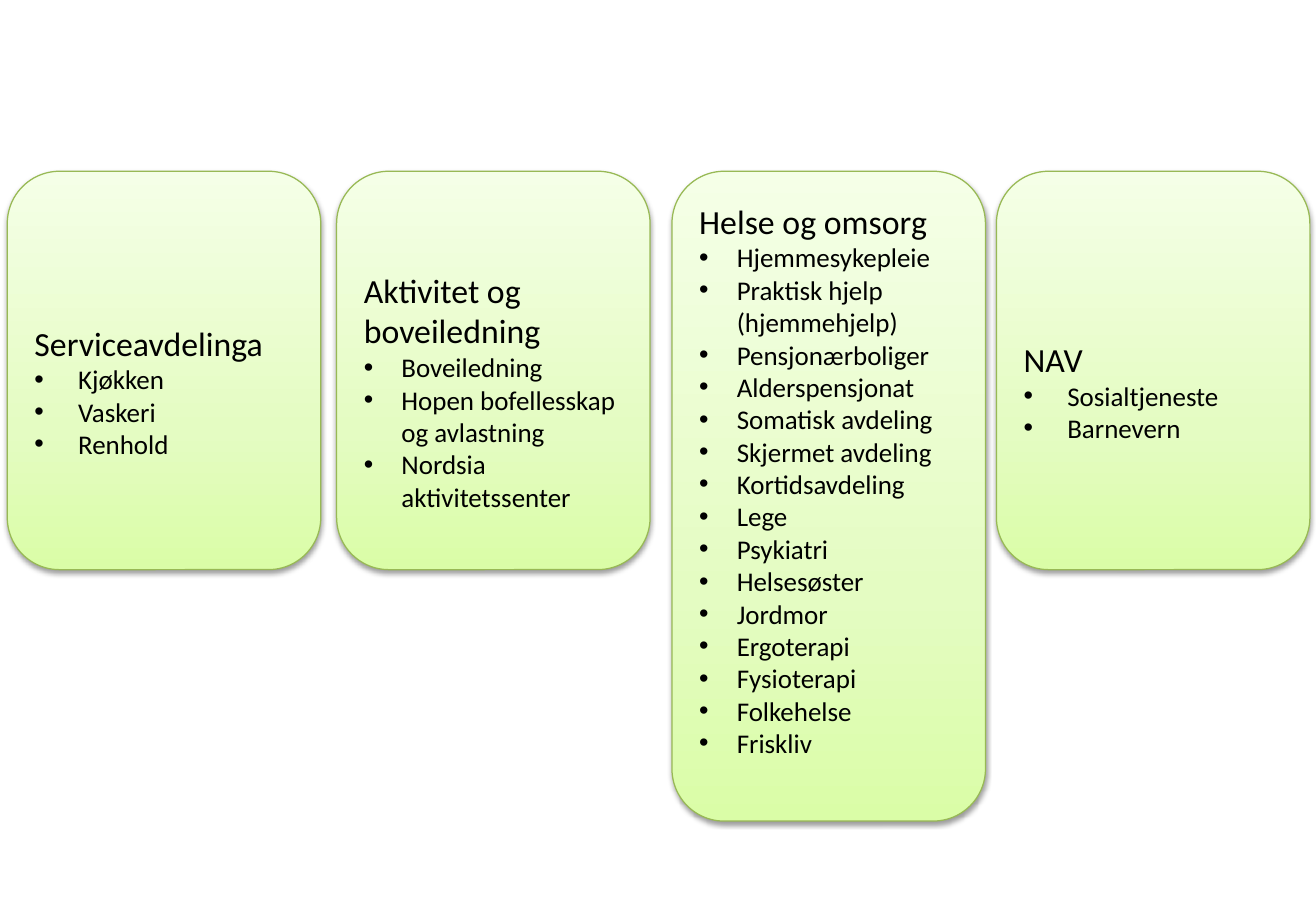
from pptx import Presentation
from pptx.dml.color import RGBColor
from pptx.enum.shapes import MSO_SHAPE
from pptx.enum.text import MSO_ANCHOR, PP_ALIGN
from pptx.oxml import parse_xml
from pptx.oxml.ns import nsdecls
from pptx.util import Inches, Pt

BLACK = RGBColor(0x00, 0x00, 0x00)
GREEN = RGBColor(0x98, 0xB9, 0x55)
LIME = RGBColor(0xDA, 0xFD, 0xA7)
PALE_LIME = RGBColor(0xE4, 0xFC, 0xC2)
CREAM = RGBColor(0xF5, 0xFF, 0xE7)

STOPS = "".join(
    f'<a:gs pos="{pos * 1000}"><a:srgbClr val="{color}"/></a:gs>'
    for pos, color in [(0, LIME), (35, PALE_LIME), (100, CREAM)]
)
GRADIENT = (
    f'<a:gradFill {nsdecls("a")} rotWithShape="1"><a:gsLst>{STOPS}</a:gsLst>'
    '<a:lin ang="16200000" scaled="0"/></a:gradFill>'
)
SHADOW = (
    f'<a:effectLst {nsdecls("a")}><a:outerShdw blurRad="{Pt(3.1)}" dist="{Pt(1.6)}" '
    'dir="5400000" rotWithShape="0"><a:srgbClr val="000000"><a:alpha val="38000"/>'
    '</a:srgbClr></a:outerShdw></a:effectLst>'
)
BULLET_FONT = f'<a:buFont {nsdecls("a")} typeface="Arial"/>'
BULLET = f'<a:buChar {nsdecls("a")} char="•"/>'

DEPARTMENTS = [
    (0.06, 3.28, 0.39, 0.05, 0.36, "Serviceavdelinga", ["Kjøkken", "Vaskeri", "Renhold"]),
    (2.77, 3.28, 0.39, 0.05, 0.31, "Aktivitet og boveiledning",
     ["Boveiledning", "Hopen bofellesskap og avlastning", "Nordsia aktivitetssenter"]),
    (5.53, 5.35, 0.05, 0.32, 0.31, "Helse og omsorg",
     ["Hjemmesykepleie", "Praktisk hjelp (hjemmehjelp)", "Pensjonærboliger",
      "Alderspensjonat", "Somatisk avdeling", "Skjermet avdeling", "Kortidsavdeling",
      "Lege", "Psykiatri", "Helsesøster", "Jordmor", "Ergoterapi", "Fysioterapi",
      "Folkehelse", "Friskliv"]),
    (8.2, 3.28, 0.39, 0.05, 0.36, "NAV", ["Sosialtjeneste", "Barnevern"]),
]


def add_text(p, text, size=16, indent=0):
    p.alignment = PP_ALIGN.LEFT
    r = p.add_run()
    r.text = text
    r.font.name = "Calibri"
    r.font.size = Pt(size)
    r.font.color.rgb = BLACK
    if indent:
        pPr = p._p.get_or_add_pPr()
        pPr.set("marL", str(Inches(indent)))
        pPr.set("indent", str(-Inches(indent)))
        pPr.append(parse_xml(BULLET_FONT))
        pPr.append(parse_xml(BULLET))


prs = Presentation()
prs.slide_width = Inches(10.83)
prs.slide_height = Inches(7.5)
s = prs.slides.add_slide(prs.slide_layouts[6])

for left, height, top_inset, bottom_inset, indent, heading, services in DEPARTMENTS:
    sp = s.shapes.add_shape(MSO_SHAPE.ROUNDED_RECTANGLE, Inches(left), Inches(1.41),
                            Inches(2.58), Inches(height))
    sp.line.color.rgb = GREEN
    sp.line.width = Pt(0.75)
    spPr = sp._element.spPr
    spPr.insert(2, parse_xml(GRADIENT))
    spPr.append(parse_xml(SHADOW))
    tf = sp.text_frame
    tf.word_wrap = True
    tf.vertical_anchor = MSO_ANCHOR.MIDDLE
    tf.margin_top = Inches(top_inset)
    tf.margin_bottom = Inches(bottom_inset)
    add_text(tf.paragraphs[0], heading, size=20)
    for service in services:
        add_text(tf.add_paragraph(), service, indent=indent)

prs.save("out.pptx")
